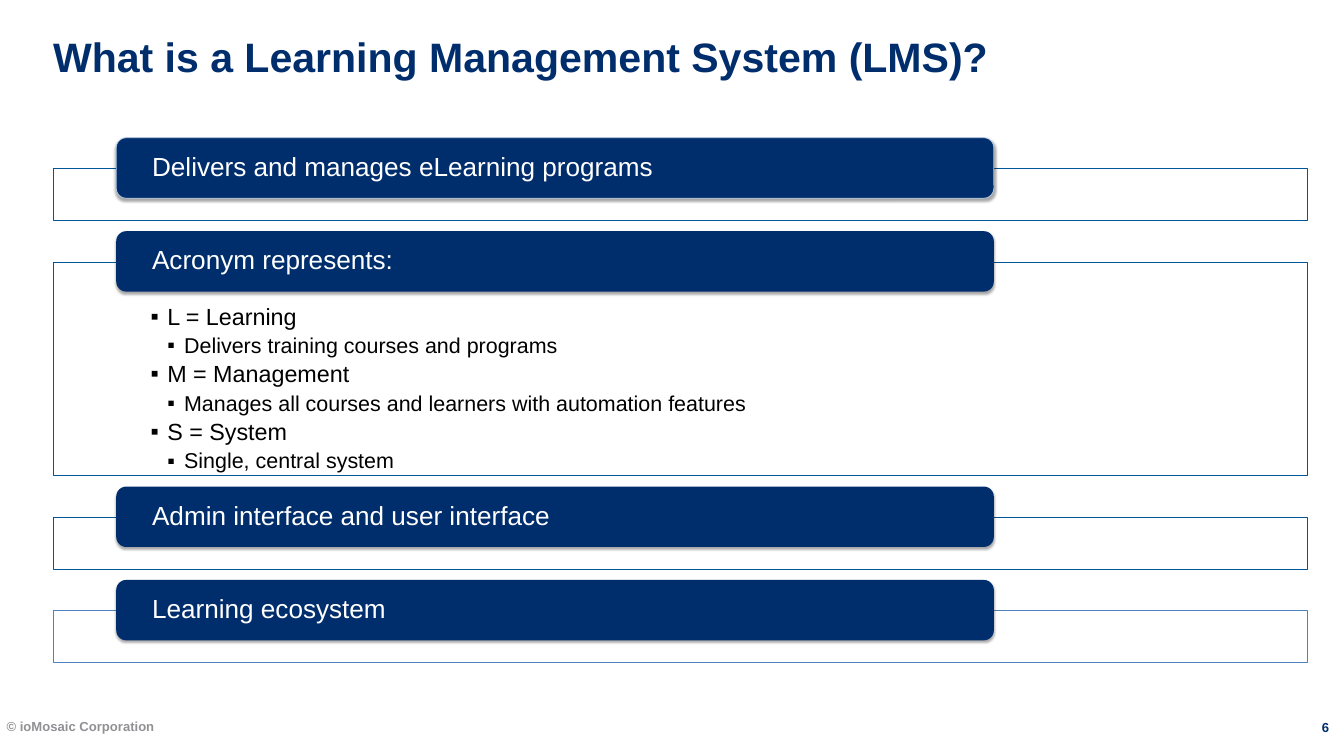
from dataclasses import dataclass

import pptx
import pptx.dml.color
import pptx.enum.shapes
import pptx.enum.text
import pptx.oxml
import pptx.oxml.ns
import pptx.util

RGBColor = pptx.dml.color.RGBColor
MSO_SHAPE = pptx.enum.shapes.MSO_SHAPE
PP_ALIGN = pptx.enum.text.PP_ALIGN
MSO_ANCHOR = pptx.enum.text.MSO_ANCHOR

PX = 9144
FONT = "Arial"
NAVY = RGBColor(0x00, 0x2E, 0x6D)
BLUE = RGBColor(0x00, 0x55, 0x96)
SKY = RGBColor(0x4F, 0x81, 0xBD)
PALE_BLUE = RGBColor(0xB9, 0xCD, 0xE5)
GRAY = RGBColor(0x91, 0x91, 0x95)
WHITE = RGBColor(0xFF, 0xFF, 0xFF)
BLACK = RGBColor(0x00, 0x00, 0x00)

PANEL_LEFT, PANEL_WIDTH = 79, 1866
HEADING_LEFT, HEADING_WIDTH, HEADING_HEIGHT = 173, 1306, 90
FIRST_HEADING_TOP = 205
HEADING_OVERHANG = 46
SECTION_GAP = 16
BULLET_SIZES = {1: 25, 2: 23}


@dataclass(frozen=True)
class Bullet:
    level: int
    text: str


@dataclass(frozen=True)
class Section:
    heading: str
    panel_height: int = 77
    panel_line: RGBColor = BLUE
    heading_line: RGBColor | None = None
    bullets: tuple[Bullet, ...] = ()


@dataclass(frozen=True)
class Label:
    text: str
    box: tuple[int, int, int, int]
    margins: tuple[int, int, int, int]
    size: int
    color: RGBColor
    align: PP_ALIGN = PP_ALIGN.LEFT


LABELS = (
    Label("What is a Learning Management System (LMS)?",
          (79, 47, 1834, 151), (0, 0, 10, 0), 44, NAVY),
    Label("© ioMosaic Corporation", (0, 1064, 1334, 60), (10, 5, 10, 5), 14, GRAY),
    Label("6", (1945, 1070, 55, 45), (0, 0, 0, 0), 14, NAVY, PP_ALIGN.CENTER),
)

SECTIONS = (
    Section("Delivers and manages eLearning programs", heading_line=PALE_BLUE),
    Section("Acronym represents:", panel_height=318, bullets=(
        Bullet(1, "L = Learning"),
        Bullet(2, "Delivers training courses and programs"),
        Bullet(1, "M = Management"),
        Bullet(2, "Manages all courses and learners with automation features"),
        Bullet(1, "S = System"),
        Bullet(2, "Single, central system"),
    )),
    Section("Admin interface and user interface"),
    Section("Learning ecosystem", panel_line=SKY),
)


def px(*lengths: int) -> list[int]:
    return [length * PX for length in lengths]


def xml(tag: str, attributes: str, inner: str = ""):
    namespace = pptx.oxml.ns.nsdecls("a")
    return pptx.oxml.parse_xml(f"<a:{tag} {namespace} {attributes}>{inner}</a:{tag}>")


def set_frame(frame, margins: tuple[int, int, int, int], anchor=MSO_ANCHOR.TOP) -> None:
    frame.word_wrap = True
    frame.vertical_anchor = anchor
    (frame.margin_left, frame.margin_top,
     frame.margin_right, frame.margin_bottom) = px(*margins)


def style_runs(paragraph, size: int, color: RGBColor, bold: bool = False) -> None:
    for run in paragraph.runs:
        run.font.name = FONT
        run.font.size = pptx.util.Pt(size)
        run.font.color.rgb = color
        run.font.bold = bold


def draw_label(slide, label: Label) -> None:
    frame = slide.shapes.add_textbox(*px(*label.box)).text_frame
    set_frame(frame, label.margins)
    frame.text = label.text
    frame.paragraphs[0].alignment = label.align
    style_runs(frame.paragraphs[0], label.size, label.color, bold=True)


def add_box(slide, preset: MSO_SHAPE, box: tuple[int, int, int, int],
            fill: RGBColor, line: RGBColor | None):
    shape = slide.shapes.add_shape(preset, *px(*box))
    shape.fill.solid()
    shape.fill.fore_color.rgb = fill
    if line is None:
        shape.line.fill.background()
    else:
        shape.line.color.rgb = line
        shape.line.width = pptx.util.Pt(0.75)
    shape.shadow.inherit = False
    return shape


def draw_bullets(frame, bullets: tuple[Bullet, ...]) -> None:
    set_frame(frame, (145, 64, 145, 18))
    for index, bullet in enumerate(bullets):
        paragraph = frame.add_paragraph() if index else frame.paragraphs[0]
        paragraph.text = bullet.text
        paragraph.level = bullet.level
        paragraph.alignment = PP_ALIGN.LEFT
        paragraph.line_spacing = 0.9
        paragraph.space_after = pptx.util.Pt(5)
        properties = paragraph._p.get_or_add_pPr()
        properties.set("marL", str(25 * bullet.level * PX))
        properties.set("indent", str(-25 * PX))
        properties.append(xml("buFont", f'typeface="{FONT}"'))
        properties.append(xml("buChar", 'char="▪"'))
        style_runs(paragraph, BULLET_SIZES[bullet.level], BLACK)


def draw_section(slide, section: Section, top: int) -> int:
    panel_top = top + HEADING_OVERHANG
    panel = add_box(slide, MSO_SHAPE.RECTANGLE,
                    (PANEL_LEFT, panel_top, PANEL_WIDTH, section.panel_height),
                    WHITE, section.panel_line)
    panel_color = panel._element.spPr.find(pptx.oxml.ns.qn("a:solidFill"))[0]
    panel_color.append(xml("alpha", 'val="90000"'))
    if section.bullets:
        draw_bullets(panel.text_frame, section.bullets)

    heading = add_box(slide, MSO_SHAPE.ROUNDED_RECTANGLE,
                      (HEADING_LEFT, top, HEADING_WIDTH, HEADING_HEIGHT),
                      NAVY, section.heading_line)
    effects = heading._element.spPr.find(pptx.oxml.ns.qn("a:effectLst"))
    effects.append(xml(
        "outerShdw",
        'blurRad="39370" dist="22860" dir="5400000" rotWithShape="0"',
        '<a:srgbClr val="000000"><a:alpha val="35000"/></a:srgbClr>'))
    frame = heading.text_frame
    set_frame(frame, (49, 0, 49, 0), MSO_ANCHOR.MIDDLE)
    frame.text = section.heading
    frame.paragraphs[0].alignment = PP_ALIGN.LEFT
    frame.paragraphs[0].line_spacing = 0.9
    style_runs(frame.paragraphs[0], 28, WHITE)
    return panel_top + section.panel_height + SECTION_GAP


def main() -> None:
    presentation = pptx.Presentation()
    presentation.slide_width, presentation.slide_height = px(2000, 1125)
    slide = presentation.slides.add_slide(presentation.slide_layouts[6])
    for label in LABELS:
        draw_label(slide, label)
    top = FIRST_HEADING_TOP
    for section in SECTIONS:
        top = draw_section(slide, section, top)
    presentation.save("out.pptx")


if __name__ == "__main__":
    main()
